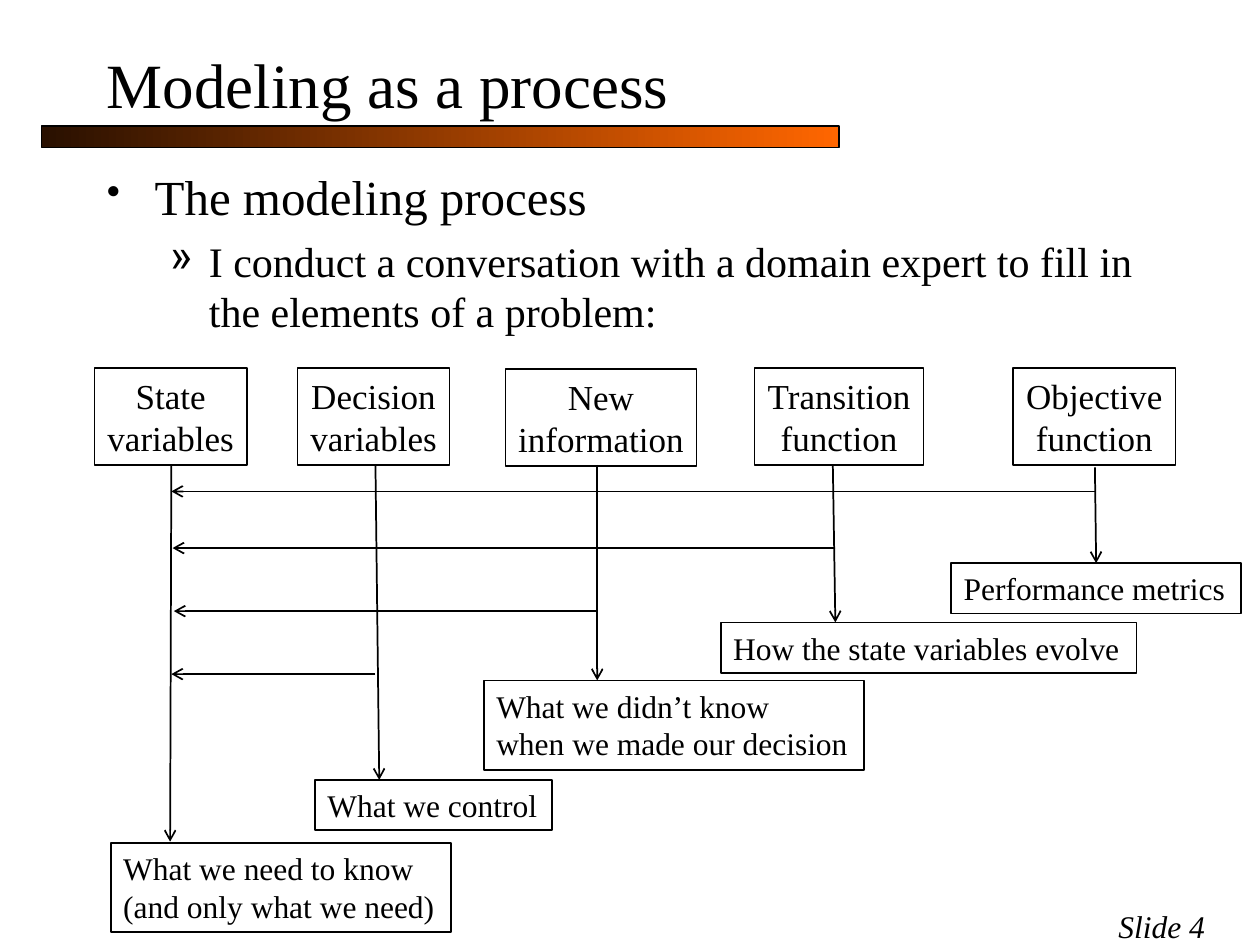
from typing import NamedTuple

from lxml.etree import SubElement
from pptx import Presentation
from pptx.dml.color import RGBColor
from pptx.enum.shapes import MSO_CONNECTOR, MSO_SHAPE
from pptx.enum.text import MSO_ANCHOR, PP_ALIGN
from pptx.oxml.ns import qn
from pptx.util import Inches, Pt

COLORS = {"ink": "000000", "bar_start": "291000", "bar_end": "FF6600"}
FONT = "Times New Roman"


class Box(NamedTuple):
    left: float
    top: float
    width: float
    height: float


class Element(NamedTuple):
    """A part of the model, its meaning, and the arrow joining them."""
    name: str
    name_box: Box
    meaning: str
    meaning_box: Box
    start: tuple[float, float]
    end: tuple[float, float]


class Bullet(NamedTuple):
    text: str
    size: float
    mark: str
    mark_percent: int
    margin: float
    hanging: float
    space_before: float


ELEMENTS = [
    Element("State\nvariables", Box(0.75, 2.92, 1.21, 0.77),
            "What we need to know\n(and only what we need)", Box(0.88, 6.69, 2.7, 0.71),
            (1.36, 3.69), (1.35, 6.68)),
    Element("Decision\nvariables", Box(2.36, 2.92, 1.21, 0.77),
            "What we control", Box(2.5, 6.19, 1.88, 0.4),
            (2.98, 3.7), (3.01, 6.19)),
    Element("New\ninformation", Box(4.01, 2.93, 1.52, 0.77),
            "What we didn’t know\nwhen we made our decision", Box(3.84, 5.4, 3.02, 0.71),
            (4.74, 3.69), (4.74, 5.4)),
    Element("Transition\nfunction", Box(5.99, 2.92, 1.34, 0.77),
            "How the state variables evolve", Box(5.72, 4.94, 3.3, 0.4),
            (6.61, 3.7), (6.63, 4.94)),
    Element("Objective\nfunction", Box(8.04, 2.92, 1.29, 0.77),
            "Performance metrics", Box(7.55, 4.47, 2.3, 0.4),
            (8.69, 3.71), (8.7, 4.47)),
]

# Arrows back to the state variables: from x, to x, y
FEEDBACK = [(8.69, 1.36, 3.9), (6.63, 1.37, 4.35), (4.74, 1.38, 4.85), (2.98, 1.36, 5.35)]

BULLETS = [
    Bullet("The modeling process", 28, "•", 80, 0.38, -0.38, 0),
    Bullet("I conduct a conversation with a domain expert to fill in the elements of a problem:",
           24, "»", 100, 0.81, -0.31, 6),
]


def color(name: str) -> RGBColor:
    return RGBColor.from_string(COLORS[name])


def lengths(box: Box) -> list:
    return [Inches(value) for value in box]


def write(frame, text: str, *, size: float, align=PP_ALIGN.LEFT, italic=False,
          anchor=MSO_ANCHOR.TOP, wrap=True) -> None:
    frame.word_wrap = wrap
    frame.vertical_anchor = anchor
    frame.text = text
    for paragraph in frame.paragraphs:
        paragraph.alignment = align
        font = paragraph.font
        font.name, font.size, font.italic = FONT, Pt(size), italic
        font.color.rgb = color("ink")


def add_text(slide, box: Box, text: str, **text_format) -> None:
    write(slide.shapes.add_textbox(*lengths(box)).text_frame, text, **text_format)


def add_rectangle(slide, box: Box, line_width: float):
    shape = slide.shapes.add_shape(MSO_SHAPE.RECTANGLE, *lengths(box))
    shape.shadow.inherit = False
    shape.fill.background()
    shape.line.color.rgb = color("ink")
    shape.line.width = Pt(line_width)
    return shape


def add_arrow(slide, start: tuple[float, float], end: tuple[float, float]) -> None:
    points = [Inches(value) for value in (*start, *end)]
    connector = slide.shapes.add_connector(MSO_CONNECTOR.STRAIGHT, *points)
    connector.line.color.rgb = color("ink")
    connector.line.width = Pt(1)
    SubElement(connector.line._get_or_add_ln(), qn("a:tailEnd"), type="arrow")
    SubElement(connector._element.spPr, qn("a:effectLst"))


def add_bar(slide, box: Box) -> None:
    bar = add_rectangle(slide, box, 0.75)
    bar.fill.gradient()
    bar.fill.gradient_angle = 0
    for stop, name, position in zip(bar.fill.gradient_stops, ("bar_start", "bar_end"), (0, 1)):
        stop.color.rgb = color(name)
        stop.position = position


def add_bullets(slide, box: Box, bullets: list[Bullet]) -> None:
    frame = slide.shapes.add_textbox(*lengths(box)).text_frame
    frame.word_wrap = True
    for index, bullet in enumerate(bullets):
        paragraph = frame.add_paragraph() if index else frame.paragraphs[0]
        paragraph.text = bullet.text
        paragraph.level = index
        paragraph.space_before = Pt(bullet.space_before)
        properties = paragraph._p.get_or_add_pPr()
        properties.set("marL", str(Inches(bullet.margin)))
        properties.set("indent", str(Inches(bullet.hanging)))
        SubElement(properties, qn("a:buSzPct"), val=str(bullet.mark_percent * 1000))
        SubElement(properties, qn("a:buChar"), char=bullet.mark)
        paragraph.font.name, paragraph.font.size = FONT, Pt(bullet.size)
        paragraph.font.color.rgb = color("ink")


def main() -> None:
    presentation = Presentation()
    presentation.slide_width, presentation.slide_height = Inches(10), Inches(7.5)
    slide = presentation.slides.add_slide(presentation.slide_layouts[6])

    # Heading and bullets
    add_bar(slide, Box(0.33, 1, 6.33, 0.17))
    add_text(slide, Box(0.75, 0.33, 8.5, 0.67), "Modeling as a process",
             size=36, anchor=MSO_ANCHOR.MIDDLE)
    add_bullets(slide, Box(0.75, 1.27, 8.5, 1.58), BULLETS)

    # Model elements, each with an arrow down to its meaning
    for element in ELEMENTS:
        name_shape = add_rectangle(slide, element.name_box, 0.75)
        write(name_shape.text_frame, element.name, size=20, align=PP_ALIGN.CENTER, wrap=False)
        meaning_shape = add_rectangle(slide, element.meaning_box, 1)
        write(meaning_shape.text_frame, element.meaning, size=18, wrap=False)
        add_arrow(slide, element.start, element.end)

    # Feedback to the state variables
    for start_x, end_x, y in FEEDBACK:
        add_arrow(slide, (start_x, y), (end_x, y))

    # Slide number
    add_text(slide, Box(8.18, 7.15, 2.08, 0.5), "Slide 4",
             size=18, align=PP_ALIGN.CENTER, italic=True)

    presentation.save("out.pptx")


if __name__ == "__main__":
    main()
